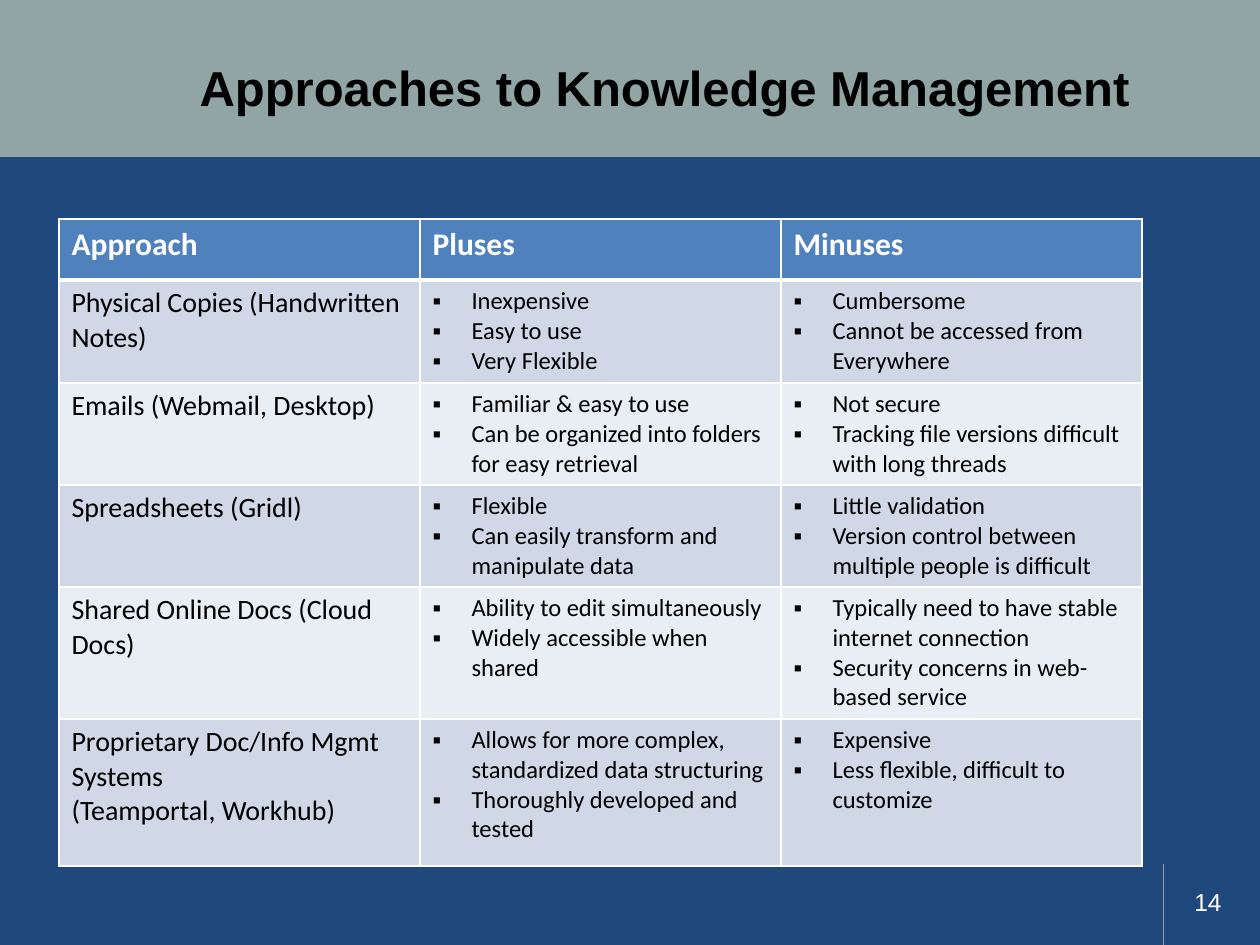
from lxml import etree
from pptx import Presentation, util as u
from pptx.dml.color import RGBColor
from pptx.enum import shapes, text
from pptx.oxml import ns

PX = 914400 // 126
WHITE, BLACK, SAGE, NAVY = "FFFFFF", "000000", "91A5A5", "1F497D"
HEADER_FILL, BANDS = "4F81BD", ("D0D8E8", "E9EDF4")
HEADERS = ["Approach", "Pluses", "Minuses"]
APPROACHES = [
    (["Physical Copies (Handwritten Notes)"],
     ["Inexpensive", "Easy to use", "Very Flexible"],
     ["Cumbersome", "Cannot be accessed from Everywhere"]),
    (["Emails (Webmail, Desktop)"],
     ["Familiar & easy to use", "Can be organized into folders for easy retrieval"],
     ["Not secure", "Tracking file versions difficult with long threads"]),
    (["Spreadsheets (Gridl)"],
     ["Flexible", "Can easily transform and manipulate data"],
     ["Little validation", "Version control between multiple people is difficult"]),
    (["Shared Online Docs (Cloud Docs)"],
     ["Ability to edit simultaneously", "Widely accessible when shared"],
     ["Typically need to have stable internet connection",
      "Security concerns in web-based service"]),
    (["Proprietary Doc/Info Mgmt Systems", "(Teamportal, Workhub)"],
     ["Allows for more complex, standardized data structuring",
      "Thoroughly developed and tested"],
     ["Expensive", "Less flexible, difficult to customize"]),
]
ROW_HEIGHTS = [61, 103, 102, 102, 132, 147]
COLUMN_WIDTH = 361


def px(n):
    return u.Emu(n * PX)


def color(value):
    return RGBColor.from_string(value)


def paint(obj, value):
    obj.fill.solid()
    obj.fill.fore_color.rgb = color(value)


def write(tf, lines, font, size, value, bold=False):
    tf.text = "\n".join(lines)
    for p in tf.paragraphs:
        for r in p.runs:
            r.font.name, r.font.size, r.font.bold = font, u.Pt(size), bold
            r.font.color.rgb = color(value)


def add_label(s, box, line, size, value, bold=False, align=text.PP_ALIGN.LEFT):
    tf = s.shapes.add_textbox(*map(px, box)).text_frame
    tf.word_wrap = True
    tf.vertical_anchor = text.MSO_ANCHOR.MIDDLE
    write(tf, [line], "Arial", size, value, bold)
    tf.paragraphs[0].alignment = align


def add_band(s, box, value):
    sp = s.shapes.add_shape(shapes.MSO_SHAPE.RECTANGLE, *map(px, box))
    sp.shadow.inherit = False
    paint(sp, value)
    sp.line.fill.background()


def add_rule(s, ends, value, width):
    line = s.shapes.add_connector(shapes.MSO_CONNECTOR.STRAIGHT, *map(px, ends))
    line.line.color.rgb = color(value)
    line.line.width = u.Pt(width)
    etree.SubElement(line._element.spPr, ns.qn("a:effectLst"))


def set_borders(cell, top=1, bottom=1):
    tcPr = cell._tc.get_or_add_tcPr()
    for side, width in (("L", 1), ("R", 1), ("T", top), ("B", bottom)):
        ln = etree.SubElement(tcPr, ns.qn(f"a:ln{side}"), w=str(u.Pt(width)))
        fill = etree.SubElement(ln, ns.qn("a:solidFill"))
        etree.SubElement(fill, ns.qn("a:srgbClr"), val=WHITE)


def add_bullets(tf):
    for p in tf.paragraphs:
        pPr = p._p.get_or_add_pPr()
        pPr.set("marL", str(px(39)))
        pPr.set("indent", str(-px(39)))
        etree.SubElement(pPr, ns.qn("a:buFont"), typeface="Arial")
        etree.SubElement(pPr, ns.qn("a:buChar"), char="▪")


def add_comparison(s, left, top):
    rows, cols = len(ROW_HEIGHTS), len(HEADERS)
    table = s.shapes.add_table(rows, cols, px(left), px(top),
                               px(cols * COLUMN_WIDTH), px(sum(ROW_HEIGHTS))).table
    for column in table.columns:
        column.width = px(COLUMN_WIDTH)
    for row, height in zip(table.rows, ROW_HEIGHTS):
        row.height = px(height)
    for j, header in enumerate(HEADERS):
        cell = table.cell(0, j)
        set_borders(cell, bottom=3)
        paint(cell, HEADER_FILL)
        write(cell.text_frame, [header], "Calibri", 18, WHITE, True)
    for i, approach in enumerate(APPROACHES, 1):
        for j, lines in enumerate(approach):
            cell = table.cell(i, j)
            set_borders(cell, top=3 if i == 1 else 1)
            paint(cell, BANDS[(i - 1) % 2])
            write(cell.text_frame, lines, "Calibri", 14 if j else 16, BLACK)
            if j:
                add_bullets(cell.text_frame)


def main():
    prs = Presentation()
    prs.slide_width, prs.slide_height = u.Inches(10), u.Inches(7.5)
    s = prs.slides.add_slide(prs.slide_layouts[6])
    paint(s.background, NAVY)
    add_band(s, (0, 0, 1260, 157), SAGE)
    add_rule(s, (1163, 945, 1163, 864), SAGE, 0.5)
    add_label(s, (132, 38, 1065, 98), "Approaches to Knowledge Management",
              28, BLACK, True, text.PP_ALIGN.CENTER)
    add_label(s, (1182, 878, 78, 47), "14", 14, WHITE)
    add_comparison(s, 59, 219)
    prs.save("out.pptx")


if __name__ == "__main__":
    main()
